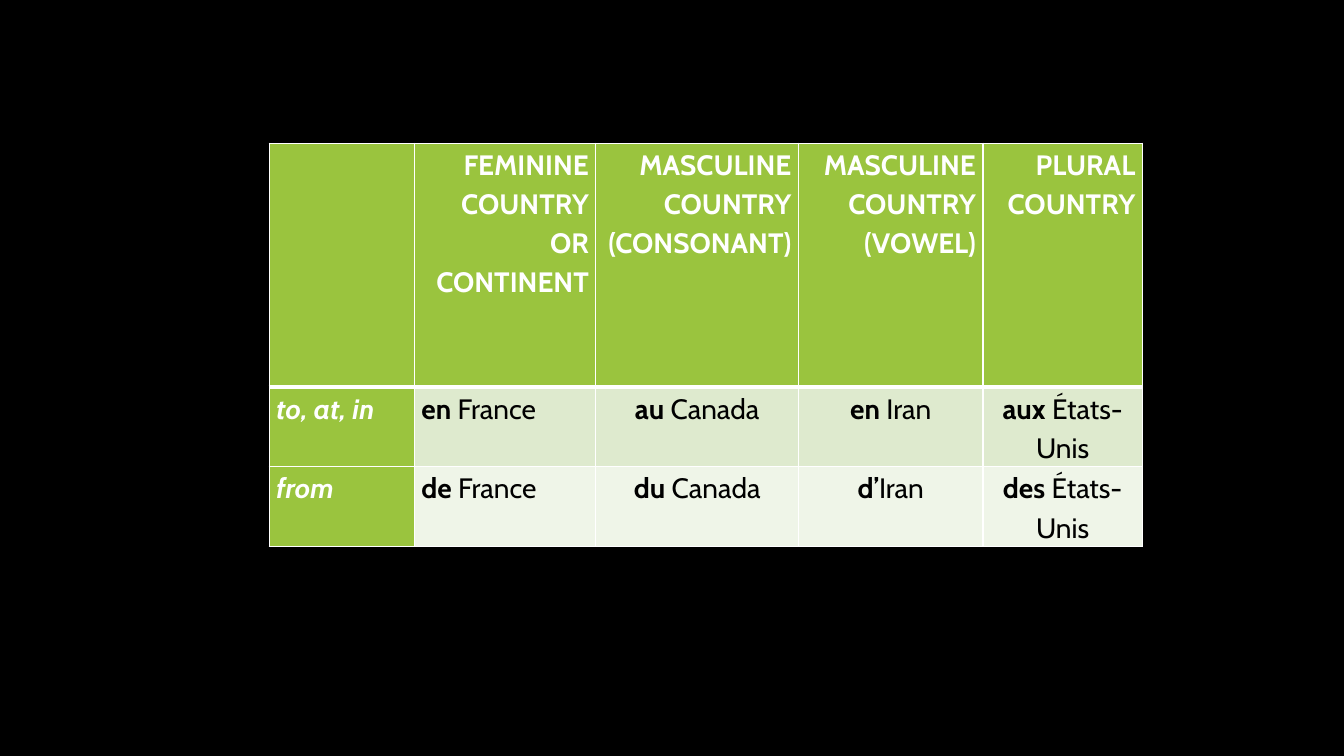
from lxml import etree
from pptx import Presentation
from pptx.dml.color import RGBColor
from pptx.enum.text import PP_ALIGN
from pptx.oxml.ns import qn
from pptx.util import Inches, Pt

LEFT, CENTER, RIGHT = PP_ALIGN.LEFT, PP_ALIGN.CENTER, PP_ALIGN.RIGHT

BLACK = RGBColor(0x00, 0x00, 0x00)
WHITE = RGBColor(0xFF, 0xFF, 0xFF)
GREEN = RGBColor(0x9A, 0xC4, 0x3E)
BANDS = [RGBColor(0xDE, 0xEA, 0xCE), RGBColor(0xEF, 0xF5, 0xE8)]

COLUMN_WIDTHS = [1.44, 1.8, 2.01, 1.83, 1.58]
ROW_HEIGHTS = [2.42, 0.79, 0.79]
COUNTRY_KINDS = [
    "FEMININE COUNTRY OR CONTINENT",
    "MASCULINE COUNTRY (CONSONANT)",
    "MASCULINE COUNTRY (VOWEL)",
    "PLURAL COUNTRY",
]
COUNTRIES = ["France", "Canada", "Iran", "États-Unis"]
PREPOSITIONS = {
    "to, at, in": ["en ", "au ", "en ", "aux "],
    "from": ["de ", "du ", "d’", "des "],
}


def add_text(paragraph, text, font="Cabin", size=20, color=BLACK, bold=False, italic=False):
    run = paragraph.add_run()
    run.text = text
    run.font.name = font
    run.font.size = Pt(size)
    run.font.color.rgb = color
    run.font.bold = bold
    run.font.italic = italic


class SlideBuilder:
    def __init__(self, slide, background):
        self.slide = slide
        slide.background.fill.solid()
        slide.background.fill.fore_color.rgb = background

    def table(self, left, top, widths, heights):
        frame = self.slide.shapes.add_table(
            len(heights), len(widths), Inches(left), Inches(top),
            Inches(sum(widths)), Inches(sum(heights)))
        for column, width in zip(frame.table.columns, widths):
            column.width = Inches(width)
        for row, height in zip(frame.table.rows, heights):
            row.height = Inches(height)
        return frame.table

    def borders(self, cell, color=WHITE, **widths):
        """Draw the sides L, R, T and B, 1 point wide unless a width is given."""
        properties = cell._tc.get_or_add_tcPr()
        for side in "LRTB":
            line = etree.SubElement(properties, qn(f"a:ln{side}"), w=str(Pt(widths.get(side, 1))))
            fill = etree.SubElement(line, qn("a:solidFill"))
            etree.SubElement(fill, qn("a:srgbClr"), val=str(color))

    def cell(self, cell, fill, runs=(), align=LEFT, **border_widths):
        """Style a cell and write its runs, given as (text, format) pairs."""
        self.borders(cell, **border_widths)
        cell.fill.solid()
        cell.fill.fore_color.rgb = fill
        cell.margin_left = cell.margin_right = Inches(0.07)
        cell.margin_top = cell.margin_bottom = 0
        paragraph = cell.text_frame.paragraphs[0]
        paragraph.alignment = align
        paragraph.line_spacing = 1.15
        for text, text_format in runs:
            add_text(paragraph, text, **text_format)


def main():
    presentation = Presentation()
    presentation.slide_width = Inches(13.33)
    presentation.slide_height = Inches(7.5)
    slide = presentation.slides.add_slide(presentation.slide_layouts[6])
    builder = SlideBuilder(slide, BLACK)
    grammar = builder.table(2.67, 1.42, COLUMN_WIDTHS, ROW_HEIGHTS)

    heading = dict(color=WHITE, bold=True)
    builder.cell(grammar.cell(0, 0), GREEN, B=3)
    for column, kind in enumerate(COUNTRY_KINDS, 1):
        builder.cell(grammar.cell(0, column), GREEN, [(kind, heading)], RIGHT, B=3)

    for row, (meaning, prepositions) in enumerate(PREPOSITIONS.items(), 1):
        top = 3 if row == 1 else 1
        builder.cell(grammar.cell(row, 0), GREEN, [(meaning, dict(heading, italic=True))], T=top)
        for column, (preposition, country) in enumerate(zip(prepositions, COUNTRIES), 1):
            builder.cell(grammar.cell(row, column), BANDS[row - 1],
                         [(preposition, dict(bold=True)), (country, {})],
                         LEFT if column == 1 else CENTER, T=top)

    presentation.save("out.pptx")


if __name__ == "__main__":
    main()
